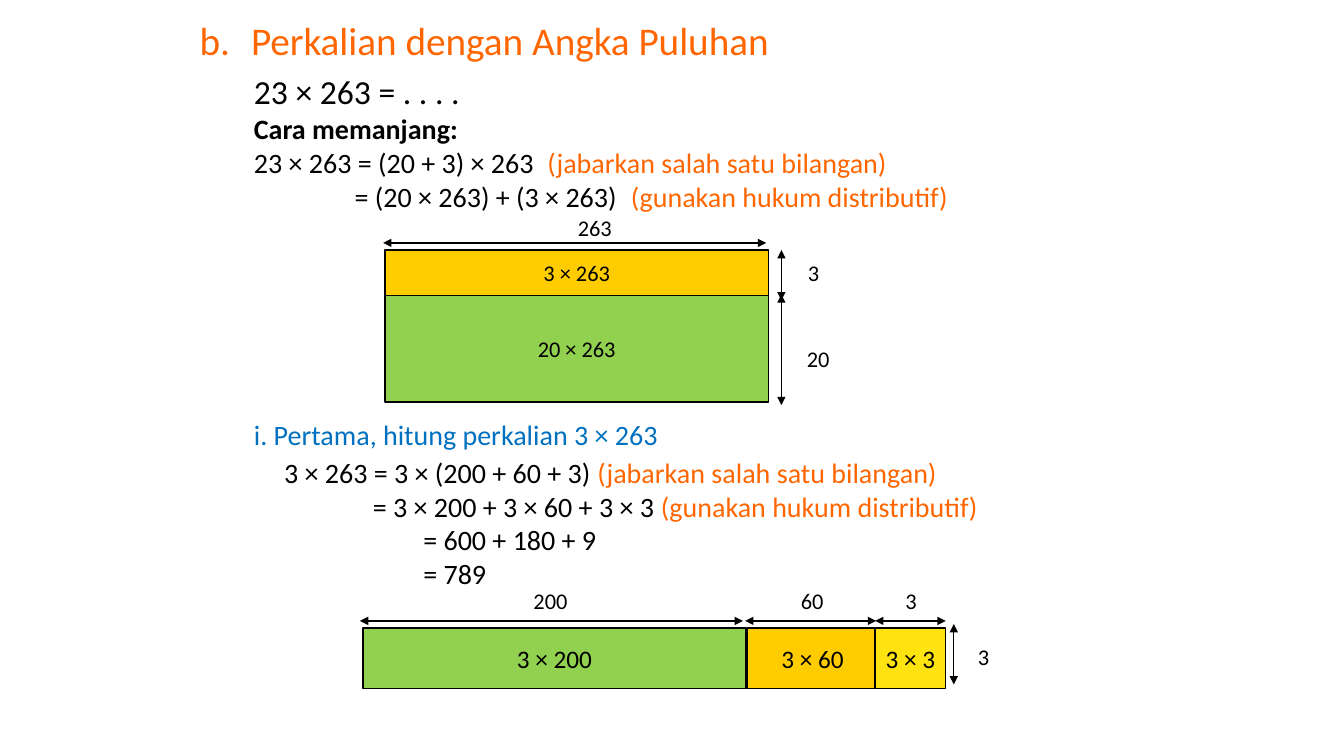
"""Build the slide on multiplying by tens, with its two area diagrams."""
from lxml.etree import SubElement
from pptx import Presentation
from pptx.dml.color import RGBColor
from pptx.enum.shapes import MSO_CONNECTOR, MSO_SHAPE
from pptx.enum.text import MSO_ANCHOR as Anchor, MSO_AUTO_SIZE as AutoSize, PP_ALIGN as Align
from pptx.oxml.ns import qn
from pptx.util import Pt

PX = 9144
THEME = {
    "font": "Calibri",
    "black": "000000", "orange": "FF6600", "blue": "0070C0",
    "green": "92D050", "amber": "FFCC00", "yellow": "FFE311",
    "title": 28, "question": 24, "body": 20, "part": 18, "label": 16,
}


def write_text(frame, *lines, size="body", color="black", align=Align.LEFT,
               anchor=Anchor.TOP, wrap=True, fit=AutoSize.NONE, tabs=()):
    """Fill a frame; a line is a string or a list of (text, format) runs."""
    frame.word_wrap, frame.auto_size, frame.vertical_anchor = wrap, fit, anchor
    for number, line in enumerate(lines):
        paragraph = frame.paragraphs[0] if number == 0 else frame.add_paragraph()
        paragraph.alignment = align
        line_tabs = tabs[number] if tabs else ()
        if line_tabs:
            tab_list = SubElement(paragraph._p.get_or_add_pPr(), qn("a:tabLst"))
            for position in line_tabs:
                SubElement(tab_list, qn("a:tab"), pos=str(position * PX), algn="l")
        for text, style in [(line, {})] if isinstance(line, str) else line:
            run = paragraph.add_run()
            run.text = text
            run.font.name = THEME["font"]
            run.font.size = Pt(THEME[size])
            run.font.bold = style.get("bold", False)
            run.font.color.rgb = RGBColor.from_string(THEME[style.get("color", color)])


def add_text(left, top, width, height, *lines, **style):
    """Place a text box that grows with its text."""
    box = slide.shapes.add_textbox(left * PX, top * PX, width * PX, height * PX)
    write_text(box.text_frame, *lines, fit=AutoSize.SHAPE_TO_FIT_TEXT, **style)


presentation = Presentation()
presentation.slide_width, presentation.slide_height = 1333 * PX, 750 * PX
slide = presentation.slides.add_slide(presentation.slide_layouts[5])

title = slide.shapes.title
title.left, title.top, title.width, title.height = 188 * PX, 11 * PX, 591 * PX, 57 * PX
write_text(title.text_frame, "b.\tPerkalian dengan Angka Puluhan",
           size="title", color="orange", wrap=False, tabs=[[51]])

expand_note = ("(jabarkan salah satu bilangan)", {"color": "orange"})
distribute_note = ("(gunakan hukum distributif)", {"color": "orange"})

add_text(242, 65, 228, 50, "23 × 263 = . . . .", size="question", wrap=False)
add_text(242, 106, 794, 111,
         [("Cara memanjang:", {"bold": True})],
         [("23 × 263 = (20 + 3) × 263\t", {}), expand_note],
         [("\t= (20 × 263) + (3 × 263)\t", {}), distribute_note],
         tabs=[[], [291], [100, 374]])
add_text(242, 409, 628, 44, "i. Pertama, hitung perkalian 3 × 263", color="blue")
add_text(272, 447, 794, 145,
         [("3 × 263 = 3 × (200 + 60 + 3) ", {}), expand_note],
         [("\t= 3 × 200 + 3 × 60 + 3 × 3 ", {}), distribute_note],
         "\t= 600 + 180 + 9",
         "\t= 789",
         tabs=[[], [88], [138], [138]])

areas = [
    (382, 293, 380, 106, "20 × 263", "green", "label"),
    (382, 248, 380, 45, "3 × 263", "amber", "label"),
    (360, 623, 380, 60, "3 × 200", "green", "part"),
    (741, 623, 130, 60, "3 × 60", "amber", "part"),
    (868, 623, 70, 60, "3 × 3", "yellow", "part"),
]
for left, top, width, height, product, fill, size in areas:
    area = slide.shapes.add_shape(MSO_SHAPE.RECTANGLE, left * PX, top * PX, width * PX, height * PX)
    area.shadow.inherit = False
    area.fill.solid()
    area.fill.fore_color.rgb = RGBColor.from_string(THEME[fill])
    area.line.color.rgb = RGBColor.from_string(THEME["black"])
    area.line.width = Pt(1)
    area.text_frame.margin_left = area.text_frame.margin_right = 0
    write_text(area.text_frame, product, size=size, align=Align.CENTER, anchor=Anchor.MIDDLE)

dimension_arrows = [
    (380, 241, 760, 241),
    (775, 292, 775, 402),
    (775, 248, 775, 298),
    (946, 619, 946, 679),
    (868, 616, 938, 616),
    (739, 616, 869, 616),
    (357, 616, 737, 616),
]
for ends in dimension_arrows:
    arrow = slide.shapes.add_connector(MSO_CONNECTOR.STRAIGHT, *(end * PX for end in ends))
    arrow.line.color.rgb = RGBColor.from_string(THEME["black"])
    arrow.line.width = Pt(1)
    for arrowhead in ("a:headEnd", "a:tailEnd"):
        SubElement(arrow.line._get_or_add_ln(), qn(arrowhead), type="triangle")
    SubElement(arrow._element.spPr, qn("a:effectLst"))

dimension_labels = [
    (516, 208, 148, "263"),
    (786, 252, 42, "3"),
    (787, 337, 49, "20"),
    (518, 578, 56, "200"),
    (781, 578, 49, "60"),
    (879, 578, 49, "3"),
    (951, 633, 49, "3"),
]
for left, top, width, length in dimension_labels:
    add_text(left, top, width, 37, length, size="label", align=Align.CENTER)

presentation.save("out.pptx")
